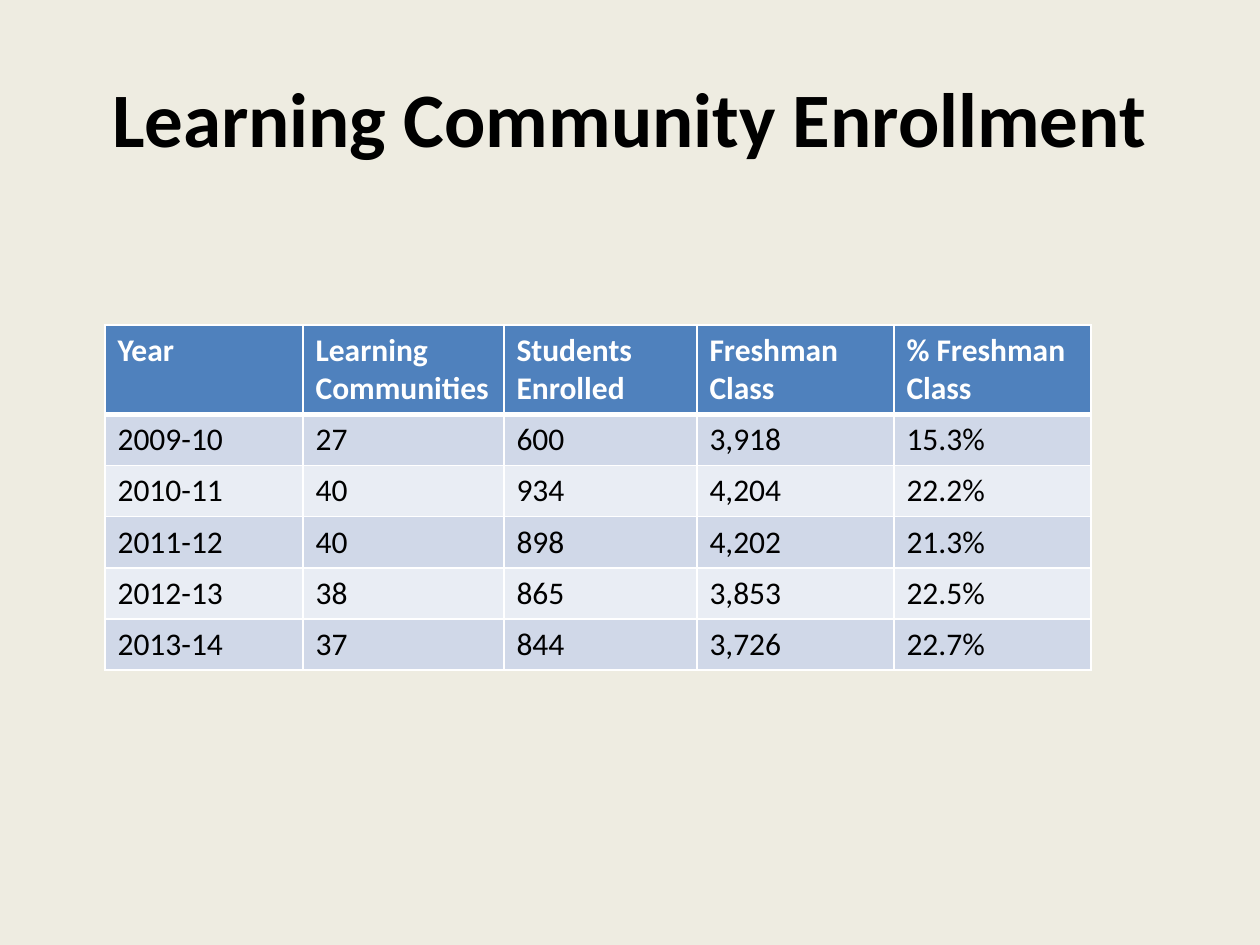
from lxml.etree import SubElement
from pptx import Presentation
from pptx.dml.color import RGBColor
from pptx.enum.text import MSO_ANCHOR, PP_ALIGN
from pptx.oxml.ns import qn
from pptx.util import Pt

PX = 914400 // 126
FONT = "Calibri"
BACKGROUND = RGBColor(0xEE, 0xEC, 0xE1)
BLACK = RGBColor(0x00, 0x00, 0x00)
WHITE = RGBColor(0xFF, 0xFF, 0xFF)
HEADER = RGBColor(0x4F, 0x81, 0xBD)
BANDS = [RGBColor(0xE9, 0xED, 0xF4), RGBColor(0xD0, 0xD8, 0xE8)]

ROWS = [
    ["Year", "Learning Communities", "Students Enrolled", "Freshman Class", "% Freshman Class"],
    ["2009-10", "27", "600", "3,918", "15.3%"],
    ["2010-11", "40", "934", "4,204", "22.2%"],
    ["2011-12", "40", "898", "4,202", "21.3%"],
    ["2012-13", "38", "865", "3,853", "22.5%"],
    ["2013-14", "37", "844", "3,726", "22.7%"],
]
COLUMN_WIDTHS = [198, 201, 193, 197, 197]
HEADER_HEIGHT, ROW_HEIGHT = 89, 51


def style_run(r, size, color, bold):
    r.font.name = FONT
    r.font.size = Pt(size)
    r.font.bold = bold
    r.font.color.rgb = color


def add_border(cell, side, width):
    """Draw one white cell edge; call it before the fill is set."""
    ln = SubElement(cell._tc.get_or_add_tcPr(), qn(f"a:ln{side}"), w=str(Pt(width)))
    SubElement(SubElement(ln, qn("a:solidFill")), qn("a:srgbClr"), val=str(WHITE))


prs = Presentation()
prs.slide_width, prs.slide_height = 1260 * PX, 945 * PX
s = prs.slides.add_slide(prs.slide_layouts[5])
s.background.fill.solid()
s.background.fill.fore_color.rgb = BACKGROUND

title = s.shapes.title
title.left, title.top, title.width, title.height = 63 * PX, 38 * PX, 1134 * PX, 157 * PX
tf = title.text_frame
tf.text = "Learning Community Enrollment"
tf.vertical_anchor = MSO_ANCHOR.MIDDLE
p = tf.paragraphs[0]
p.alignment = PP_ALIGN.CENTER
style_run(p.runs[0], 44, BLACK, True)

table_height = HEADER_HEIGHT + ROW_HEIGHT * (len(ROWS) - 1)
table = s.shapes.add_table(len(ROWS), len(COLUMN_WIDTHS), 105 * PX, 325 * PX,
                           sum(COLUMN_WIDTHS) * PX, table_height * PX).table
for column, width in zip(table.columns, COLUMN_WIDTHS):
    column.width = width * PX

for i, values in enumerate(ROWS):
    is_header = i == 0
    table.rows[i].height = (HEADER_HEIGHT if is_header else ROW_HEIGHT) * PX
    for j, value in enumerate(values):
        cell = table.cell(i, j)
        cell.text = value
        style_run(cell.text_frame.paragraphs[0].runs[0], 18,
                  WHITE if is_header else BLACK, is_header)
        for side in "LRTB":
            thick = (is_header and side == "B") or (i == 1 and side == "T")
            add_border(cell, side, 3 if thick else 1)
        cell.fill.solid()
        cell.fill.fore_color.rgb = HEADER if is_header else BANDS[i % 2]

prs.save("out.pptx")
